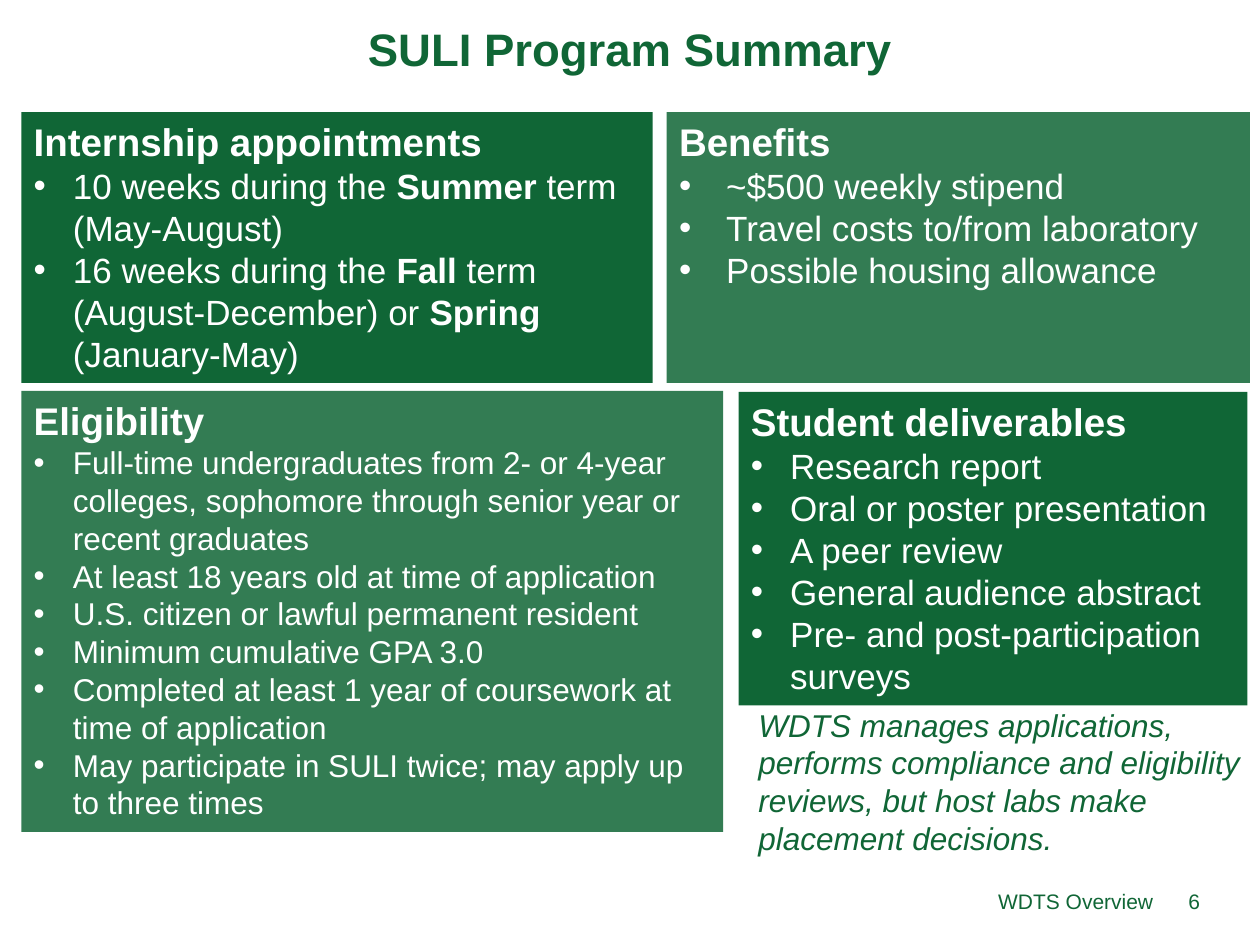
from lxml.etree import SubElement
from pptx import Presentation
from pptx.dml.color import RGBColor
from pptx.enum.shapes import MSO_SHAPE as Shape
from pptx.enum.text import MSO_ANCHOR as Anchor, PP_ALIGN as Align
from pptx.oxml.ns import qn
from pptx.util import Cm, Pt


class Theme:
    font = "Arial"
    green = RGBColor(0x10, 0x66, 0x36)
    white = RGBColor(0xFF, 0xFF, 0xFF)
    title, heading, large, body, footer = 26, 22, 20, 18, 12


def write(paragraph, text, size, color, bold=False, italic=False,
          align=Align.LEFT, spacing=None):
    """Fill a paragraph; parts between ** marks switch to bold."""
    paragraph.alignment = align
    if spacing:
        paragraph.line_spacing = spacing
    for index, part in enumerate(text.split("**")):
        if not part:
            continue
        run = paragraph.add_run()
        run.text = part
        font = run.font
        font.name, font.size, font.color.rgb = Theme.font, Pt(size), color
        font.bold, font.italic = bold or index % 2 == 1, italic


def add_bullet(paragraph, indent):
    properties = paragraph._p.get_or_add_pPr()
    properties.set("marL", str(Cm(indent)))
    properties.set("indent", str(-Cm(indent)))
    SubElement(properties, qn("a:buFont"), typeface=Theme.font)
    SubElement(properties, qn("a:buChar"), char="•")


class SlideBuilder:
    def __init__(self, presentation):
        self.slide = presentation.slides.add_slide(presentation.slide_layouts[6])

    def label(self, text, box, anchor=Anchor.MIDDLE, **style):
        frame = self.slide.shapes.add_textbox(*map(Cm, box)).text_frame
        frame.word_wrap = True
        frame.vertical_anchor = anchor
        write(frame.paragraphs[0], text, color=Theme.green, **style)

    def panel(self, heading, items, box, size=Theme.large, indent=0.79, opacity=100):
        shape = self.slide.shapes.add_shape(Shape.RECTANGLE, *map(Cm, box))
        shape.shadow.inherit = False
        shape.line.fill.background()
        shape.fill.solid()
        shape.fill.fore_color.rgb = Theme.green
        if opacity < 100:
            color = shape.fill._xPr.find(qn("a:solidFill"))[0]
            SubElement(color, qn("a:alpha"), val=str(opacity * 1000))
        frame = shape.text_frame
        frame.word_wrap = True
        frame.vertical_anchor = Anchor.TOP
        write(frame.paragraphs[0], heading, Theme.heading, Theme.white, bold=True)
        for item in items:
            paragraph = frame.add_paragraph()
            add_bullet(paragraph, indent)
            write(paragraph, item, size, Theme.white)


def main():
    presentation = Presentation()
    presentation.slide_width, presentation.slide_height = Cm(25.4), Cm(19.05)
    builder = SlideBuilder(presentation)
    left, top, top_height = 0.43, 2.26, 5.46
    footer_top, footer_height = 17.65, 1.02

    builder.label("SULI Program Summary", (0, 0.03, 25.4, 2.11), size=Theme.title,
                  bold=True, align=Align.CENTER, spacing=0.8)
    builder.panel("Eligibility", [
        "Full-time undergraduates from 2- or 4-year colleges, "
        "sophomore through senior year or recent graduates",
        "At least 18 years old at time of application",
        "U.S. citizen or lawful permanent resident",
        "Minimum cumulative GPA 3.0",
        "Completed at least 1 year of coursework at time of application",
        "May participate in SULI twice; may apply up to three times",
    ], (left, 7.88, 14.15, 8.89), size=Theme.body, opacity=85)
    builder.panel("Internship appointments", [
        "10 weeks during the **Summer** term (May-August)",
        "16 weeks during the **Fall** term (August-December) "
        "or **Spring** (January-May)",
    ], (left, top, 12.73, top_height))
    builder.panel("Benefits", [
        "~$500 weekly stipend",
        "Travel costs to/from laboratory",
        "Possible housing allowance",
    ], (13.44, top, 11.76, top_height), indent=0.95, opacity=85)
    builder.panel("Student deliverables", [
        "Research report",
        "Oral or poster presentation",
        "A peer review",
        "General audience abstract",
        "Pre- and post-participation surveys",
    ], (14.89, 7.9, 10.26, 6.32))
    builder.label("WDTS manages applications, performs compliance and eligibility "
                  "reviews, but host labs make placement decisions.",
                  (15.04, 14.1, 11.2, 3.33), anchor=Anchor.TOP,
                  size=Theme.body, italic=True)
    builder.label("WDTS Overview", (8.69, footer_top, 14.81, footer_height),
                  size=Theme.footer, align=Align.RIGHT)
    builder.label("6", (23.37, footer_top, 1.07, footer_height),
                  size=Theme.footer, align=Align.RIGHT)
    presentation.save("out.pptx")


if __name__ == "__main__":
    main()
